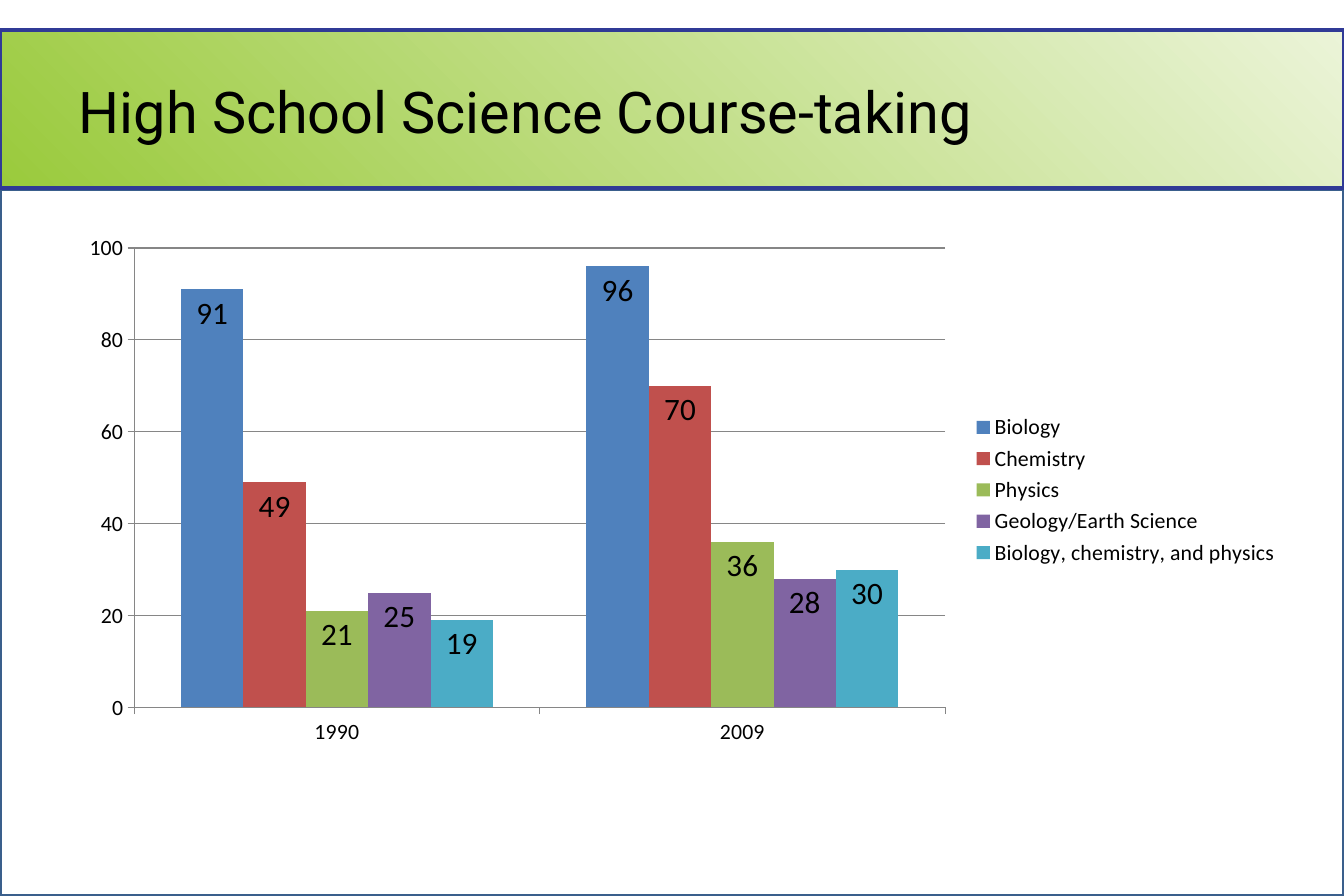
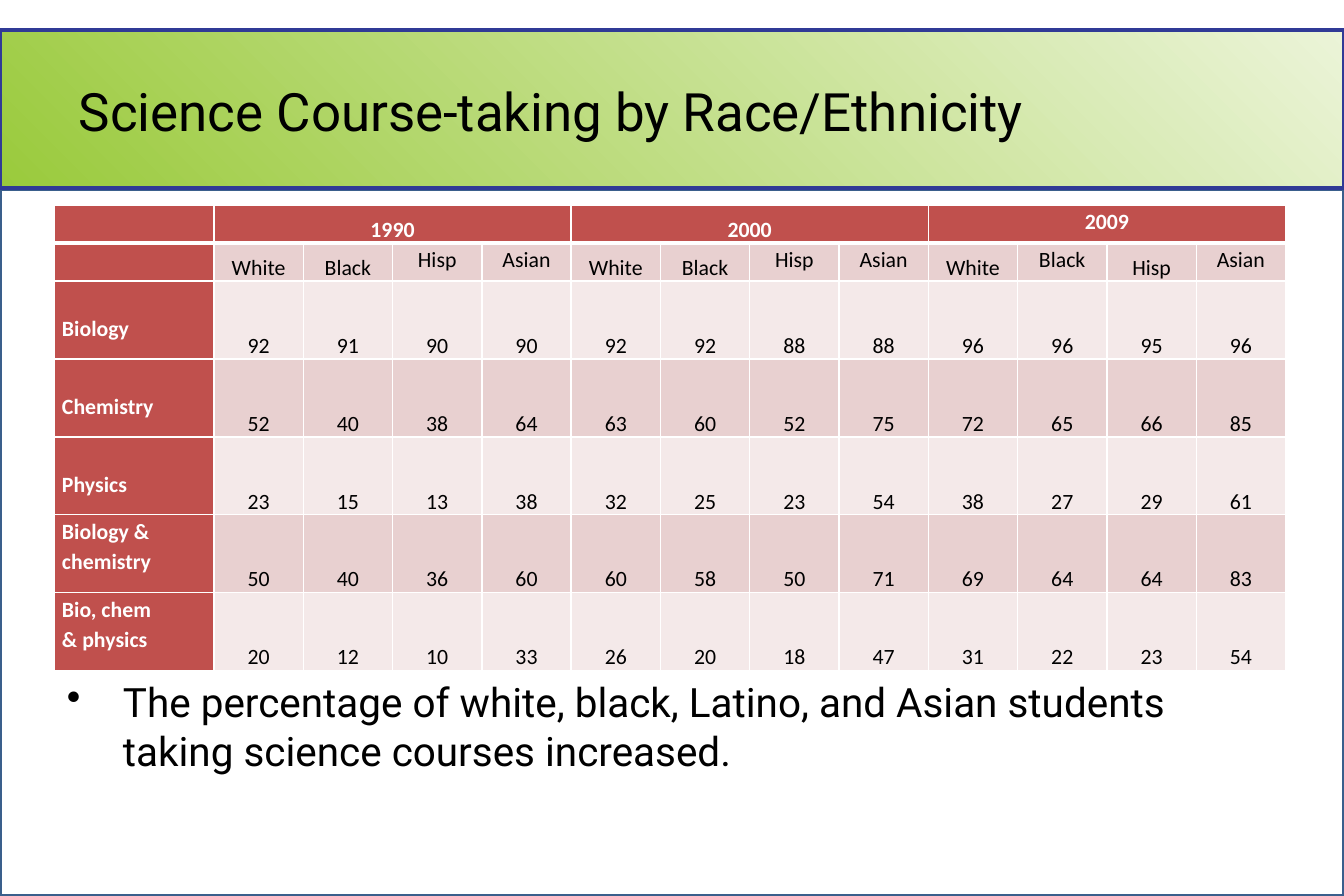
import pptx
import pptx.util
import pptx.chart.data
import pptx.dml.color
import pptx.enum.chart
import pptx.enum.shapes
import pptx.enum.text
import pptx.oxml
import pptx.oxml.ns
from dataclasses import dataclass

# Content
CHART_TITLE = "High School Science Course-taking"
YEARS = ["1990", "2009"]
COURSES = [
    ("Biology", (91, 96), "4F81BD"),
    ("Chemistry", (49, 70), "C0504D"),
    ("Physics", (21, 36), "9BBB59"),
    ("Geology/Earth Science", (25, 28), "8064A2"),
    ("Biology, chemistry, and physics", (19, 30), "4BACC6"),
]

TABLE_TITLE = "Science Course-taking by Race/Ethnicity"
RACES = ["White", "Black", "Hisp", "Asian"]
# Year, its anchor, and the anchors of its four race headings (b bottom, t top)
YEAR_GROUPS = [("1990", "b", "bbtt"), ("2000", "b", "bbtt"), ("2009", "t", "btbt")]
# Label lines, top margin of the label in px, percentages
COURSE_ROWS = [
    (["Biology"], 31, [92, 91, 90, 90, 92, 92, 88, 88, 96, 96, 95, 96]),
    (["Chemistry"], 31, [52, 40, 38, 64, 63, 60, 52, 75, 72, 65, 66, 85]),
    (["Physics"], 31, [23, 15, 13, 38, 32, 25, 23, 54, 38, 27, 29, 61]),
    (["Biology & chemistry"], 0, [50, 40, 36, 60, 60, 58, 50, 71, 69, 64, 64, 83]),
    (["Bio, chem", "& physics"], 0, [20, 12, 10, 33, 26, 20, 18, 47, 31, 22, 23, 54]),
]
FINDING = ("The percentage of white, black, Latino, and Asian students "
           "taking science courses increased.")

# Layout in px
PX_PER_INCH = 112
SLIDE_W, SLIDE_H = 1344, 896
BAND_BOX = (0, 30, SLIDE_W, 158)
BODY_BOX = (0, 189, SLIDE_W, 707)
TITLE_BOX = (67, 36, 1210, 149)
CHART_BOX = (65, 224, 1226, 532)
TABLE_X, TABLE_Y, TABLE_W = 54, 205, 1232
LABEL_W, HEAD_H, ROW_H = 160, 38, 78
FINDING_BOX = (56, 672, 1232, 110)


@dataclass(frozen=True)
class Theme:
    black: str = "000000"
    white: str = "FFFFFF"
    band: tuple = ("9ACA3C", "EBF4D8")
    band_line: str = "303A96"
    body_line: str = "3A5F8C"
    axis: str = "868686"
    head: str = "C0504D"
    stripes: tuple = ("E8D0D0", "F4E9E9")
    display: str = "Roboto"
    data: str = "Calibri"
    chart_title: int = 37
    table_title: int = 34
    finding: int = 26
    value: int = 20
    label: int = 14


THEME = Theme()
ANCHOR = {"t": pptx.enum.text.MSO_ANCHOR.TOP,
          "m": pptx.enum.text.MSO_ANCHOR.MIDDLE,
          "b": pptx.enum.text.MSO_ANCHOR.BOTTOM}
ALIGN = {"l": pptx.enum.text.PP_ALIGN.LEFT, "c": pptx.enum.text.PP_ALIGN.CENTER}


def px(n):
    return pptx.util.Emu(round(n * 914400 / PX_PER_INCH))


def box(rect):
    return [px(n) for n in rect]


def rgb(colour):
    return pptx.dml.color.RGBColor.from_string(colour)


def xml(markup):
    """Parse one DrawingML element, given without its namespace."""
    tag, rest = markup.split(" ", 1)
    return pptx.oxml.parse_xml(f"{tag} {pptx.oxml.ns.nsdecls('a')} {rest}")


def write(tf, lines, *, size, font, colour=THEME.black, bold=False,
          align="l", spacing=None, bullet=None, indent=0):
    for i, line in enumerate(lines):
        p = tf.paragraphs[0] if i == 0 else tf.add_paragraph()
        if bullet:
            pPr = p._p.get_or_add_pPr()
            pPr.set("marL", str(px(indent)))
            pPr.set("indent", str(-px(indent)))
            pPr.append(xml(f'<a:buChar char="{bullet}"/>'))
        p.alignment = ALIGN[align]
        if spacing:
            p.line_spacing = spacing
        r = p.add_run()
        r.text = line
        r.font.size = pptx.util.Pt(size)
        r.font.name = font
        r.font.bold = bold
        r.font.color.rgb = rgb(colour)


# Shared frame and title
def add_frame(layout, slide):
    """Draw the body outline and title band, then hand them to the layout."""
    frame = [(BODY_BOX, THEME.body_line, 2, None),
             (BAND_BOX, THEME.band_line, 3, THEME.band)]
    for i, (rect, line, width, gradient) in enumerate(frame):
        sp = slide.shapes.add_shape(pptx.enum.shapes.MSO_SHAPE.RECTANGLE, *box(rect))
        sp.shadow.inherit = False
        sp.line.color.rgb = rgb(line)
        sp.line.width = pptx.util.Pt(width)
        if gradient:
            sp.fill.gradient()
            sp.fill.gradient_angle = 45
            for stop, colour in zip(sp.fill.gradient_stops, gradient):
                stop.color.rgb = rgb(colour)
        else:
            sp.fill.background()
        layout.shapes.element.insert(2 + i, sp.element)


def add_title(slide, text, size):
    title = slide.shapes.title
    title.left, title.top, title.width, title.height = box(TITLE_BOX)
    tf = title.text_frame
    tf.word_wrap = True
    tf.auto_size = pptx.enum.text.MSO_AUTO_SIZE.NONE
    tf.vertical_anchor = ANCHOR["m"]
    tf.margin_left = tf.margin_right = px(12)
    tf.margin_top = tf.margin_bottom = px(7)
    write(tf, [text], size=size, font=THEME.display)


# Chart slide
def add_course_chart(slide):
    data = pptx.chart.data.CategoryChartData(number_format="#,##0")
    data.categories = YEARS
    for name, values, _ in COURSES:
        data.add_series(name, values)
    chart = slide.shapes.add_chart(
        pptx.enum.chart.XL_CHART_TYPE.COLUMN_CLUSTERED, *box(CHART_BOX), data).chart
    chart.has_title = False
    chart.font.name = THEME.data
    chart.font.size = pptx.util.Pt(THEME.label)
    chart.font.color.rgb = rgb(THEME.black)
    chart.has_legend = True
    chart.legend.position = pptx.enum.chart.XL_LEGEND_POSITION.RIGHT
    chart.legend.include_in_layout = False
    chart.legend.font.size = pptx.util.Pt(THEME.label)

    value_axis = chart.value_axis
    value_axis.minimum_scale, value_axis.maximum_scale = 0, 100
    value_axis.major_unit = 20
    value_axis.has_major_gridlines = True
    value_axis.major_gridlines.format.line.color.rgb = rgb(THEME.axis)
    for axis in (chart.category_axis, value_axis):
        axis.major_tick_mark = pptx.enum.chart.XL_TICK_MARK.OUTSIDE
        axis.format.line.color.rgb = rgb(THEME.axis)
        axis.tick_labels.font.size = pptx.util.Pt(THEME.label)

    plot = chart.plots[0]
    plot.gap_width = 150
    plot.overlap = 0
    plot.vary_by_categories = False
    for series, (_, _, colour) in zip(plot.series, COURSES):
        series.format.fill.solid()
        series.format.fill.fore_color.rgb = rgb(colour)
        labels = series.data_labels
        labels.show_value = True
        labels.position = pptx.enum.chart.XL_LABEL_POSITION.INSIDE_END
        labels.font.size = pptx.util.Pt(THEME.value)


# Table slide
def style_cell(cell, fill, top=1, bottom=1):
    cell.margin_left = cell.margin_right = px(8)
    cell.margin_top = cell.margin_bottom = 0
    cell.fill.solid()
    cell.fill.fore_color.rgb = rgb(fill)
    tcPr = cell._tc.get_or_add_tcPr()
    for i, (side, width) in enumerate(zip("LRTB", (1, 1, top, bottom))):
        tcPr.insert(i, xml(
            f'<a:ln{side} w="{pptx.util.Pt(width)}"><a:solidFill>'
            f'<a:srgbClr val="{THEME.white}"/></a:solidFill></a:ln{side}>'))


def write_cell(cell, lines, anchor="b", head=False, align="c"):
    cell.vertical_anchor = ANCHOR[anchor]
    write(cell.text_frame, lines, size=THEME.label, font=THEME.data, bold=head,
          colour=THEME.white if head else THEME.black, align=align, spacing=1.15)


def add_course_table(slide):
    n_races = len(RACES)
    n_values = n_races * len(YEAR_GROUPS)
    heights = [HEAD_H] * 2 + [ROW_H] * len(COURSE_ROWS)
    widths = [LABEL_W] + [(TABLE_W - LABEL_W) / n_values] * n_values
    table = slide.shapes.add_table(
        len(heights), len(widths),
        *box((TABLE_X, TABLE_Y, TABLE_W, sum(heights)))).table
    table.first_row = table.horz_banding = False
    for column, width in zip(table.columns, widths):
        column.width = px(width)
    for row, height in zip(table.rows, heights):
        row.height = px(height)

    # Fills and borders
    for r in range(len(heights)):
        for c in range(len(widths)):
            fill = THEME.head if r == 0 or c == 0 else THEME.stripes[(r - 1) % 2]
            style_cell(table.cell(r, c), fill, top=3 if r == 1 else 1,
                       bottom=3 if r == 0 else 1)

    # Year and race headings
    for g, (year, anchor, race_anchors) in enumerate(YEAR_GROUPS):
        first = 1 + g * n_races
        table.cell(0, first).merge(table.cell(0, first + n_races - 1))
        write_cell(table.cell(0, first), [year], anchor, head=True)
        for c, (race, race_anchor) in enumerate(zip(RACES, race_anchors), first):
            write_cell(table.cell(1, c), [race], race_anchor)

    # Course rows
    for r, (label, margin, values) in enumerate(COURSE_ROWS, 2):
        table.cell(r, 0).margin_top = px(margin)
        write_cell(table.cell(r, 0), label, "t", head=True, align="l")
        for c, value in enumerate(values, 1):
            write_cell(table.cell(r, c), [str(value)])


def add_finding(slide):
    tf = slide.shapes.add_textbox(*box(FINDING_BOX)).text_frame
    tf.word_wrap = True
    tf.auto_size = pptx.enum.text.MSO_AUTO_SIZE.SHAPE_TO_FIT_TEXT
    write(tf, [FINDING], size=THEME.finding, font=THEME.display, bullet="•", indent=56)


def main():
    prs = pptx.Presentation()
    prs.slide_width, prs.slide_height = px(SLIDE_W), px(SLIDE_H)
    layout = prs.slide_layouts[5]

    s = prs.slides.add_slide(layout)
    add_frame(layout, s)
    add_title(s, CHART_TITLE, THEME.chart_title)
    add_course_chart(s)

    s = prs.slides.add_slide(layout)
    add_title(s, TABLE_TITLE, THEME.table_title)
    add_course_table(s)
    add_finding(s)

    prs.save("out.pptx")


if __name__ == "__main__":
    main()
